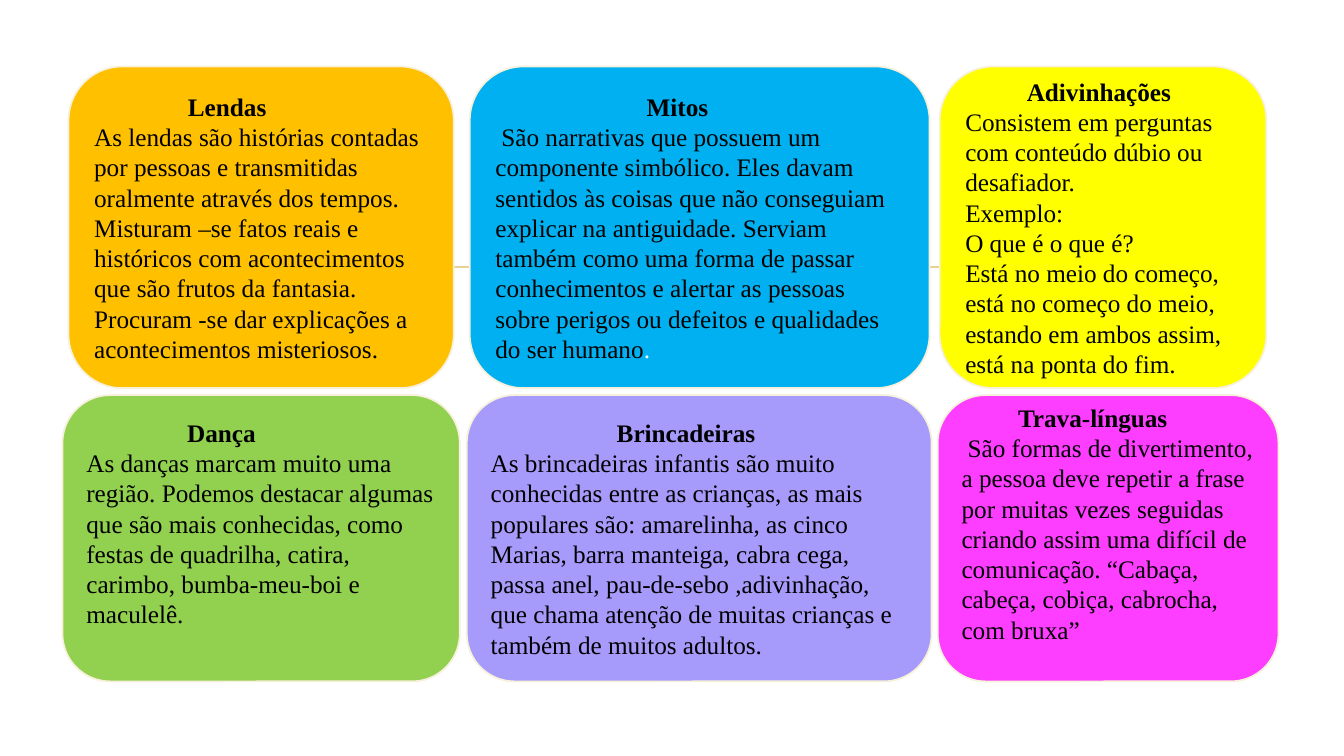
from dataclasses import dataclass

from pptx import Presentation
from pptx.dml.color import RGBColor
from pptx.enum.shapes import MSO_CONNECTOR, MSO_SHAPE
from pptx.enum.text import MSO_ANCHOR, PP_ALIGN
from pptx.oxml.ns import qn
from pptx.util import Inches, Pt
from lxml.etree import SubElement

COLORS = {
    "orange": "FFC000", "blue": "00B0F0", "yellow": "FFFF00",
    "green": "92D050", "lilac": "A69BFB", "pink": "FD3DFF",
    "border": "F7F0DA", "line": "E8D191", "text": "000000", "white": "FFFFFF",
}
FONT = "Times New Roman"
LINE_SPACING = Pt(21.6)
TOP_ROW = (0.66, 3.19)
BOTTOM_ROW = (3.92, 2.84)


@dataclass
class Card:
    left: float
    width: float
    color: str
    title: str
    title_indent: float
    body: list
    body_indent: float = 0
    extra_bottom: float = 0
    white_end: str = ""


TOP_CARDS = [
    Card(0.68, 3.82, "orange", "Lendas", 0.93, [
        "As lendas são histórias contadas por pessoas e transmitidas oralmente "
        "através dos tempos. Misturam –se fatos reais e históricos com "
        "acontecimentos que são frutos da fantasia. Procuram -se dar "
        "explicações a acontecimentos misteriosos."]),
    Card(4.66, 4.56, "blue", "Mitos", 1.5, [
        "São narrativas que possuem um componente simbólico. Eles davam "
        "sentidos às coisas que não conseguiam explicar na antiguidade. "
        "Serviam também como uma forma de passar conhecimentos e alertar as "
        "pessoas sobre perigos ou defeitos e qualidades do ser humano"],
        body_indent=0.06, white_end="."),
    Card(9.32, 3.24, "yellow", "Adivinhações", 0.61, [
        "Consistem em perguntas com conteúdo dúbio ou desafiador.",
        "Exemplo:",
        "O que é o que é?",
        "Está no meio do começo, está no começo do meio, estando em ambos "
        "assim, está na ponta do fim."]),
]
BOTTOM_CARDS = [
    Card(0.62, 3.94, "green", "Dança", 1.0, [
        "As danças marcam muito uma região. Podemos destacar algumas que são "
        "mais conhecidas, como festas de quadrilha, catira, carimbo, "
        "bumba-meu-boi e maculelê."], extra_bottom=0.3),
    Card(4.63, 4.61, "lilac", "Brincadeiras", 1.25, [
        "As brincadeiras infantis são muito conhecidas entre as crianças, as "
        "mais populares são: amarelinha, as cinco Marias, barra manteiga, "
        "cabra cega, passa anel, pau-de-sebo ,adivinhação, que chama atenção "
        "de muitas crianças e também de muitos adultos."]),
    Card(9.3, 3.38, "pink", "Trava-línguas", 0.56, [
        "São formas de divertimento, a pessoa deve repetir a frase por muitas "
        "vezes seguidas criando assim uma difícil de comunicação. “Cabaça, "
        "cabeça, cobiça, cabrocha, com bruxa”"],
        body_indent=0.06, extra_bottom=0.3),
]


def rgb(name):
    return RGBColor.from_string(COLORS[name])


def add_line(s, x1, x2, y):
    line = s.shapes.add_connector(
        MSO_CONNECTOR.STRAIGHT, Inches(x1), Inches(y), Inches(x2), Inches(y))
    line.line.color.rgb = rgb("line")
    line.line.width = Pt(1.25)
    SubElement(line._element.spPr, qn("a:effectLst"))


def write_paragraph(p, text, indent, bold=False):
    p._p.get_or_add_pPr().set("indent", str(Inches(indent)))
    p.alignment = PP_ALIGN.LEFT
    p.line_spacing = LINE_SPACING
    p.font.name = FONT
    p.font.size = Pt(18)
    p.font.bold = bold
    p.font.color.rgb = rgb("text")
    p.add_run().text = text


def add_card(s, card, top, height):
    sp = s.shapes.add_shape(
        MSO_SHAPE.ROUNDED_RECTANGLE, Inches(card.left), Inches(top),
        Inches(card.width), Inches(height))
    sp.shadow.inherit = False
    sp.fill.solid()
    sp.fill.fore_color.rgb = rgb(card.color)
    sp.line.color.rgb = rgb("border")
    sp.line.width = Pt(1.25)

    tf = sp.text_frame
    tf.word_wrap = True
    tf.vertical_anchor = MSO_ANCHOR.MIDDLE
    tf.margin_bottom = Inches(0.05 + card.extra_bottom)
    write_paragraph(tf.paragraphs[0], card.title, card.title_indent, bold=True)
    for text in card.body:
        p = tf.add_paragraph()
        write_paragraph(p, text, card.body_indent)
    if card.white_end:
        r = p.add_run()
        r.text = card.white_end
        r.font.color.rgb = rgb("white")


def add_row(s, cards, top, height):
    for card in cards:
        add_card(s, card, top, height)


def main():
    prs = Presentation()
    prs.slide_width = Inches(13.33)
    prs.slide_height = Inches(7.5)
    s = prs.slides.add_slide(prs.slide_layouts[6])
    add_line(s, 1.53, 11.81, 2.65)
    add_row(s, TOP_CARDS, *TOP_ROW)
    add_row(s, BOTTOM_CARDS, *BOTTOM_ROW)
    prs.save("out.pptx")


if __name__ == "__main__":
    main()
